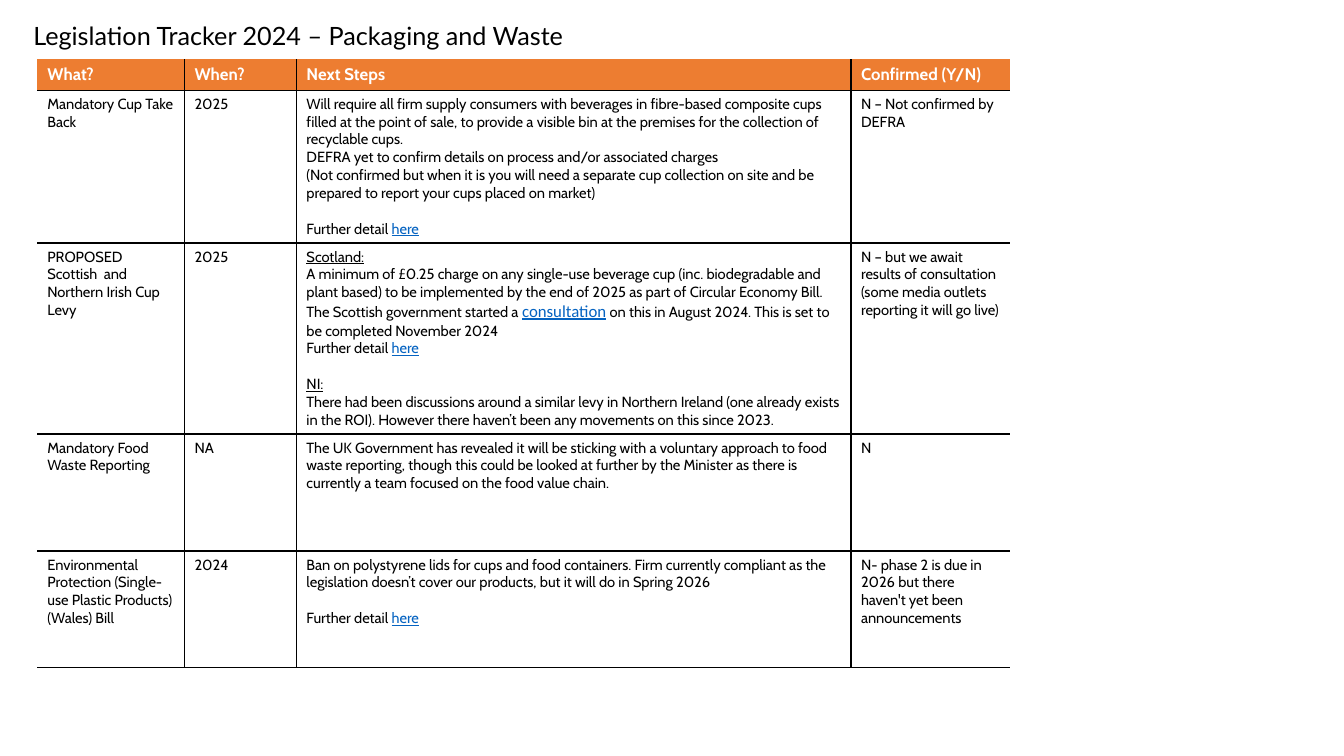
from pptx import Presentation
from pptx import util as u
from pptx.dml.color import RGBColor
from pptx.enum import text
from pptx.oxml import parse_xml
from pptx.oxml.ns import nsdecls

PX = 9144  # 100 px to the inch
COLORS = {"ink": "000000", "header": "ED7D31", "paper": "FFFFFF", "link": "0563C1"}
LINK = {"color": "link", "underline": True}
HEADING = {"underline": True}
GAP = None  # one line of space before the next paragraph
LINE_PT = 12.8
DETAIL = ["Further detail ", ("here", LINK)]

COLUMNS = [146, 111, 550, 158]
ROWS = [23, 139, 116, 116, 116]
HEADERS = ["What?", "When?", "Next Steps", "Confirmed (Y/N)"]
# Each cell is a list of paragraphs, each paragraph a list of spans
LAWS = [
    [[["Mandatory Cup Take Back"]], [["2025"]],
     [["Will require all firm supply consumers with beverages in fibre-based composite cups "
       "filled at the point of sale, to provide a visible bin at the premises for the "
       "collection of recyclable cups."],
      ["DEFRA yet to confirm details on process and/or associated charges"],
      ["(Not confirmed but when it is you will need a separate cup collection on site and be "
       "prepared to report your cups placed on market)"],
      GAP, DETAIL],
     [["N – Not confirmed by DEFRA"]]],
    [[["PROPOSED"], ["Scottish  and Northern Irish Cup Levy"]], [["2025"]],
     [[("Scotland:", HEADING)],
      ["A minimum of £0.25 charge on any single-use beverage cup (inc. biodegradable and "
       "plant based) to be implemented by the end of 2025 as part of Circular Economy Bill. "
       "The Scottish government started a ",
       ("consultation", {**LINK, "font": "Calibri", "size": 12}),
       " on this in August 2024. This is set to be completed November 2024"],
      DETAIL, GAP, [("NI:", HEADING)],
      ["There had been discussions around a similar levy in Northern Ireland (one already "
       "exists in the ROI). However there haven’t been any movements on this since 2023."]],
     [["N – but we await results of consultation (some media outlets reporting it will go "
       "live)"]]],
    [[["Mandatory Food Waste Reporting"]], [["NA"]],
     [["The UK Government has revealed it will be sticking with a voluntary approach to food "
       "waste reporting, though this could be looked at further by the Minister as there is "
       "currently a team focused on the food value chain."]],
     [["N"]]],
    [[["Environmental Protection (Single-use Plastic Products) (Wales) Bill"]], [["2024"]],
     [["Ban on polystyrene lids for cups and food containers. Firm currently compliant as the "
       "legislation doesn’t cover our products, but it will do in Spring 2026"],
      GAP, DETAIL],
     [["N- phase 2 is due in 2026 but there haven't yet been announcements"]]],
]


def add_span(para, words, font="Cabin", size=10.5, color="ink", bold=False, underline=False):
    span = para.add_run()
    span.text = words
    span.font.name, span.font.size = font, u.Pt(size)
    span.font.bold, span.font.underline = bold, underline
    span.font.color.rgb = RGBColor.from_string(COLORS[color])


def write(frame, paragraphs, **style):
    """Fill a text frame; a span is a string or a (string, format) pair."""
    para, space = frame.paragraphs[0], 0
    for number, spans in enumerate(paragraphs):
        if spans is GAP:
            space = LINE_PT
            continue
        if number:
            para = frame.add_paragraph()
        para.alignment = text.PP_ALIGN.LEFT
        para.space_before, space = u.Pt(space), 0
        for item in spans:
            words, extra = (item, {}) if isinstance(item, str) else item
            add_span(para, words, **{**style, **extra})


def set_borders(cell, visible):
    """Draw 1 pt lines on the visible sides (L, R, T, B) and none on the others."""
    properties = cell._tc.get_or_add_tcPr()
    for index, side in enumerate("LRTB"):
        paint = (f'<a:solidFill><a:srgbClr val="{COLORS["ink"]}"/></a:solidFill>'
                 if side in visible else "<a:noFill/>")
        properties.insert(index, parse_xml(
            f'<a:ln{side} {nsdecls("a")} w="{u.Pt(1)}">{paint}</a:ln{side}>'))


def add_title(page, left, top, width, height):
    title = page.shapes.title
    title.left, title.top, title.width, title.height = (
        n * PX for n in (left, top, width, height))
    frame = title.text_frame
    frame.word_wrap = True
    frame.auto_size = text.MSO_AUTO_SIZE.NONE
    frame.vertical_anchor = text.MSO_ANCHOR.TOP
    write(frame, [["Legislation Tracker 2024 – Packaging and Waste"]], font="Lato", size=18)


def add_tracker(page, left, top):
    table = page.shapes.add_table(len(ROWS), len(COLUMNS), left * PX, top * PX,
                                  sum(COLUMNS) * PX, sum(ROWS) * PX).table
    table.first_row = True
    table.horz_banding = False
    for column, width in zip(table.columns, COLUMNS):
        column.width = width * PX
    for row, height in zip(table.rows, ROWS):
        row.height = height * PX

    contents = [[[[name]] for name in HEADERS]] + LAWS
    for r, cells in enumerate(contents):
        for c, paragraphs in enumerate(cells):
            cell = table.cell(r, c)
            if r == 0:
                cell.fill.solid()
                cell.fill.fore_color.rgb = RGBColor.from_string(COLORS["header"])
                write(cell.text_frame, paragraphs, size=12, color="paper", bold=True)
            else:
                cell.fill.background()
                write(cell.text_frame, paragraphs)
            # Inner rules and the bottom edge only
            sides = "B" + "T" * (r > 0) + "L" * (c > 0) + "R" * (c < len(COLUMNS) - 1)
            set_borders(cell, sides)


def main():
    deck = Presentation()
    deck.slide_width, deck.slide_height = 1333 * PX, 750 * PX
    page = deck.slides.add_slide(deck.slide_layouts[5])
    add_title(page, 23, 15, 570, 40)
    add_tracker(page, 37, 59)
    deck.save("out.pptx")


if __name__ == "__main__":
    main()
